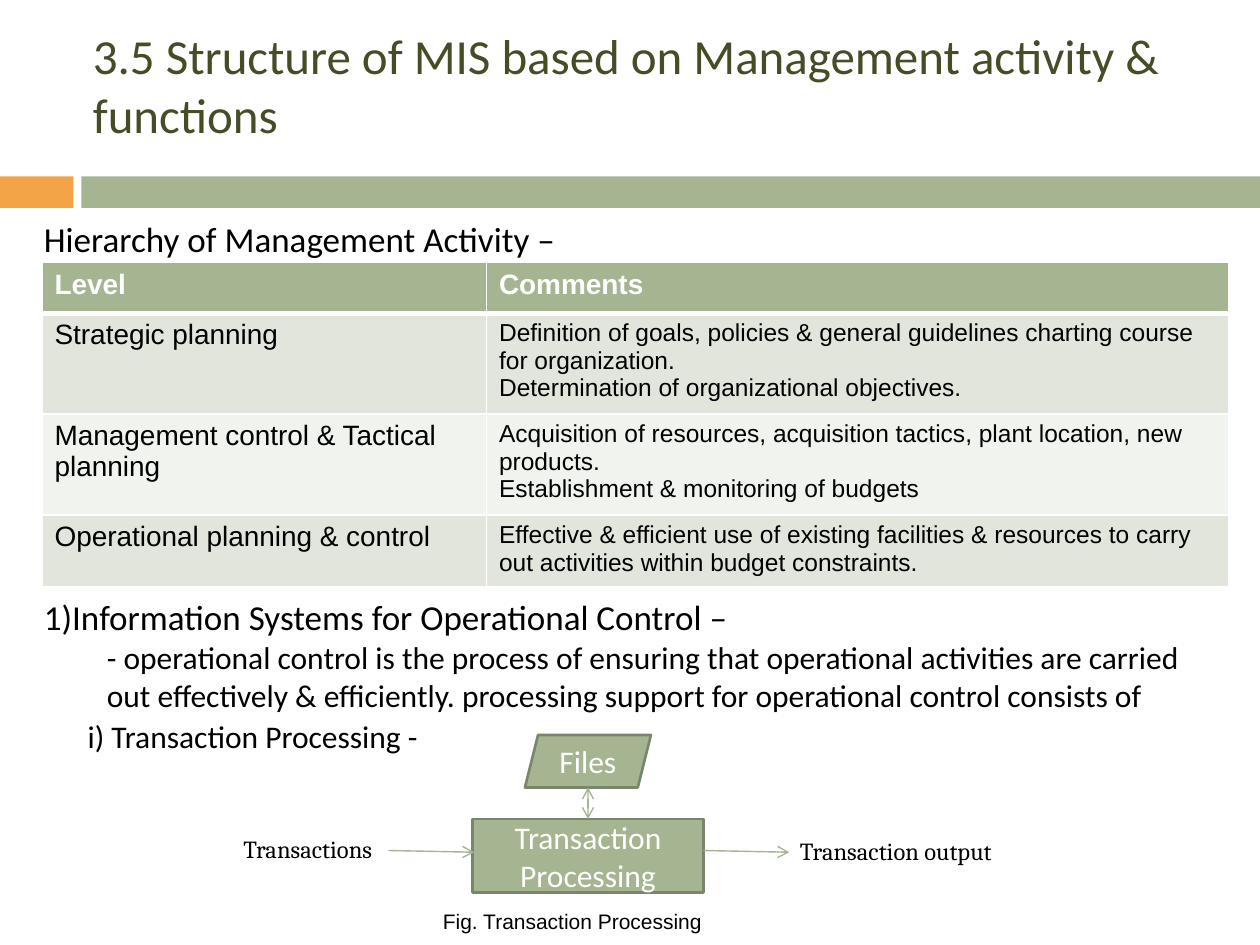
"""Build the slide on MIS structure by management activity and functions."""
from lxml import etree
from pptx import Presentation
from pptx.dml.color import RGBColor
from pptx.enum.shapes import MSO_CONNECTOR, MSO_SHAPE
from pptx.enum.text import MSO_ANCHOR, PP_ALIGN
from pptx.oxml import parse_xml
from pptx.oxml.ns import nsdecls, qn
from pptx.util import Pt

STRAIGHT = MSO_CONNECTOR.STRAIGHT
RECT, PARALLELOGRAM = MSO_SHAPE.RECTANGLE, MSO_SHAPE.PARALLELOGRAM
TOP, MIDDLE = MSO_ANCHOR.TOP, MSO_ANCHOR.MIDDLE
LEFT, CENTER = PP_ALIGN.LEFT, PP_ALIGN.CENTER
rgb = RGBColor.from_string
GREEN, ORANGE, OLIVE, OUTLINE = "A5B592", "F3A447", "444D26", "7A866C"
BLACK, WHITE = "000000", "FFFFFF"


def write(tf, lines, size, font, color, anchor=TOP, align=LEFT, bold=False):
    tf.word_wrap = True
    tf.vertical_anchor = anchor
    tf.text = "\n".join(lines)
    for p in tf.paragraphs:
        p.alignment = align
        p.font.size, p.font.name, p.font.bold = Pt(size), font, bold
        p.font.color.rgb = rgb(color)


def add_box(kind, x, y, w, h, fill, line=None):
    sp = s.shapes.add_shape(kind, Pt(x), Pt(y), Pt(w), Pt(h))
    sp.shadow.inherit = False
    sp.fill.solid()
    sp.fill.fore_color.rgb = rgb(fill)
    if line:
        sp.line.color.rgb = rgb(line)
        sp.line.width = Pt(1.5)
    else:
        sp.line.fill.background()
    return sp


prs = Presentation()
prs.slide_width, prs.slide_height = Pt(720), Pt(540)
s = prs.slides.add_slide(prs.slide_layouts[6])

add_box(RECT, 0, 100.8, 42, 18, ORANGE)
add_box(RECT, 46.5, 100.8, 673.5, 18, GREEN)

texts = [
    (46, 18, 642, 60, ["3.5 Structure of MIS based on Management activity & functions"],
     28, "Calibri", OLIVE, MIDDLE),
    (18, 120.8, 678, 32, ["Hierarchy of Management Activity –"], 20, "Calibri", BLACK, TOP),
    (132, 473, 102, 24.5, ["Transactions"], 14, "Cambria", BLACK, TOP),
    (450, 474, 132, 24.5, ["Transaction output"], 14, "Cambria", BLACK, TOP),
    (246, 515.5, 192, 21.6, ["Fig. Transaction Processing"], 12, "Arial", BLACK, TOP),
    (18, 337, 678, 98, [
        "1)Information Systems for Operational Control –",
        "- operational control is the process of ensuring that operational activities are "
        "carried out effectively & efficiently. processing support for operational control "
        "consists of",
        "i) Transaction Processing -"], 18, "Calibri", BLACK, TOP),
]
for x, y, w, h, lines, size, font, color, anchor in texts:
    tf = s.shapes.add_textbox(Pt(x), Pt(y), Pt(w), Pt(h)).text_frame
    write(tf, lines, size, font, color, anchor)

heading, detail, item = tf.paragraphs
heading.font.size = Pt(20)
item.space_before = Pt(2)
for p, margin in ((detail, 36), (item, 25)):
    p._p.get_or_add_pPr().set("marL", str(Pt(margin)))

rows = [
    (29, GREEN, ["Level"], ["Comments"]),
    (54.4, "E1E5DC", ["Strategic planning"],
     ["Definition of goals, policies & general guidelines charting course for organization.",
      "Determination of organizational objectives."]),
    (54.4, "F0F3EE", ["Management control & Tactical planning"],
     ["Acquisition of resources, acquisition tactics, plant location, new products.",
      "Establishment & monitoring of budgets"]),
    (38, "E1E5DC", ["Operational planning & control"],
     ["Effective & efficient use of existing facilities & resources to carry out activities "
      "within budget constraints."]),
]
table = s.shapes.add_table(4, 2, Pt(24), Pt(150), Pt(678), Pt(175.8)).table
table.columns[0].width, table.columns[1].width = Pt(254), Pt(424)
for i, (height, fill, *cells) in enumerate(rows):
    table.rows[i].height = Pt(height)
    for j, lines in enumerate(cells):
        cell = table.cell(i, j)
        header = i == 0
        size = 16 if header or j == 0 else 14
        write(cell.text_frame, lines, size, "Arial", WHITE if header else BLACK, bold=header)
        tcPr = cell._tc.get_or_add_tcPr()
        for side in "LRTB":
            thick = (header and side == "B") or (i == 1 and side == "T")
            tcPr.append(parse_xml(
                f'<a:ln{side} {nsdecls("a")} w="{Pt(3 if thick else 1)}"><a:solidFill>'
                f'<a:srgbClr val="{WHITE}"/></a:solidFill></a:ln{side}>'))
        cell.fill.solid()
        cell.fill.fore_color.rgb = rgb(fill)

nodes = [
    (PARALLELOGRAM, 300, 420, 72, 30, "Files"),
    (RECT, 270, 468, 132, 42, "Transaction Processing"),
]
for kind, x, y, w, h, label in nodes:
    sp = add_box(kind, x, y, w, h, GREEN, OUTLINE)
    write(sp.text_frame, [label], 18, "Calibri", WHITE, MIDDLE, CENTER)

arrows = [
    (336, 450, 336, 468, ("headEnd", "tailEnd")),
    (222, 486, 271, 487, ("tailEnd",)),
    (402, 486, 451, 487, ("tailEnd",)),
]
for x1, y1, x2, y2, ends in arrows:
    cn = s.shapes.add_connector(STRAIGHT, Pt(x1), Pt(y1), Pt(x2), Pt(y2))
    cn.line.color.rgb = rgb(GREEN)
    cn.line.width = Pt(0.79)
    for end in ends:
        etree.SubElement(cn.line._get_or_add_ln(), qn(f"a:{end}"), type="arrow")
    etree.SubElement(cn._element.spPr, qn("a:effectLst"))

prs.save("out.pptx")
